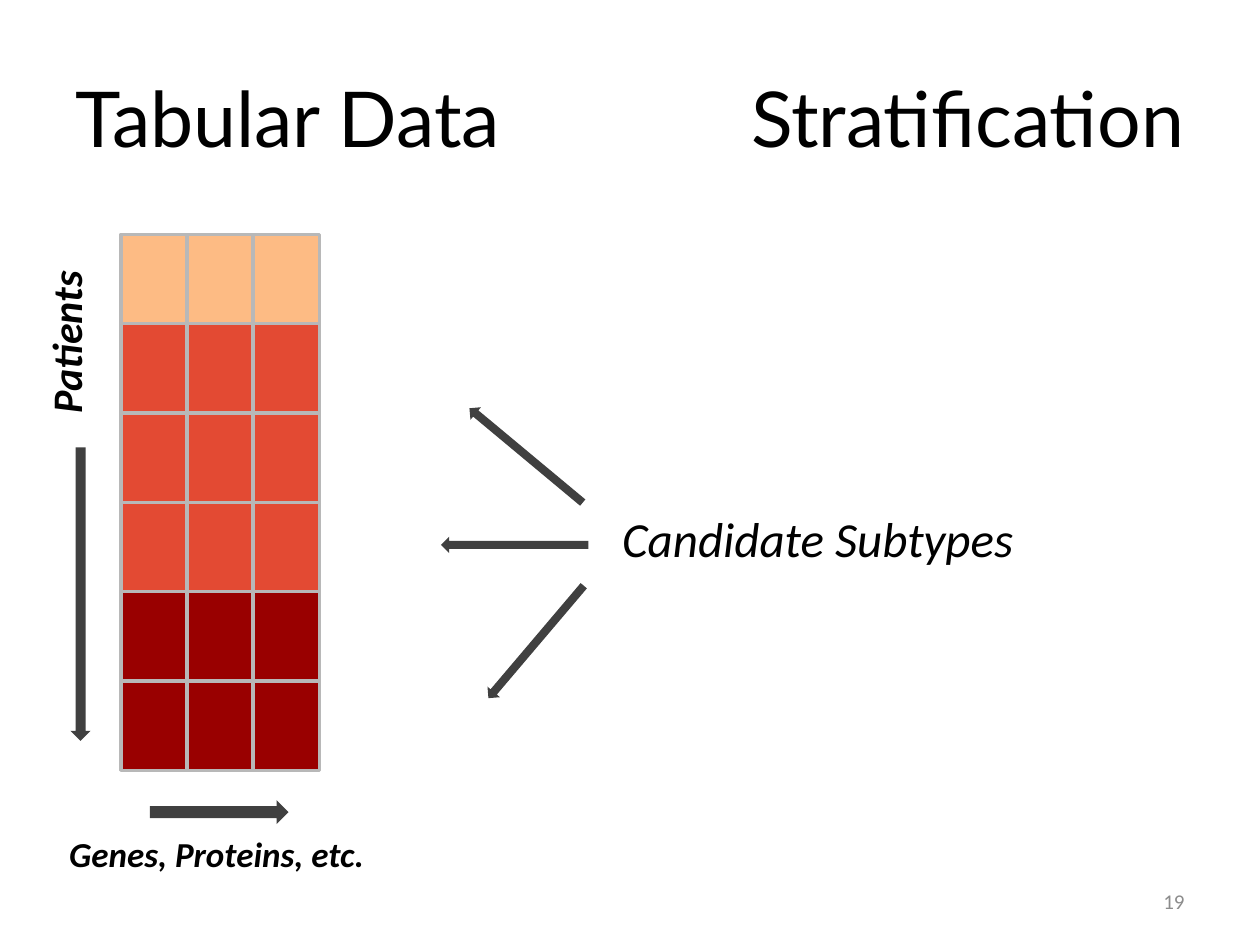
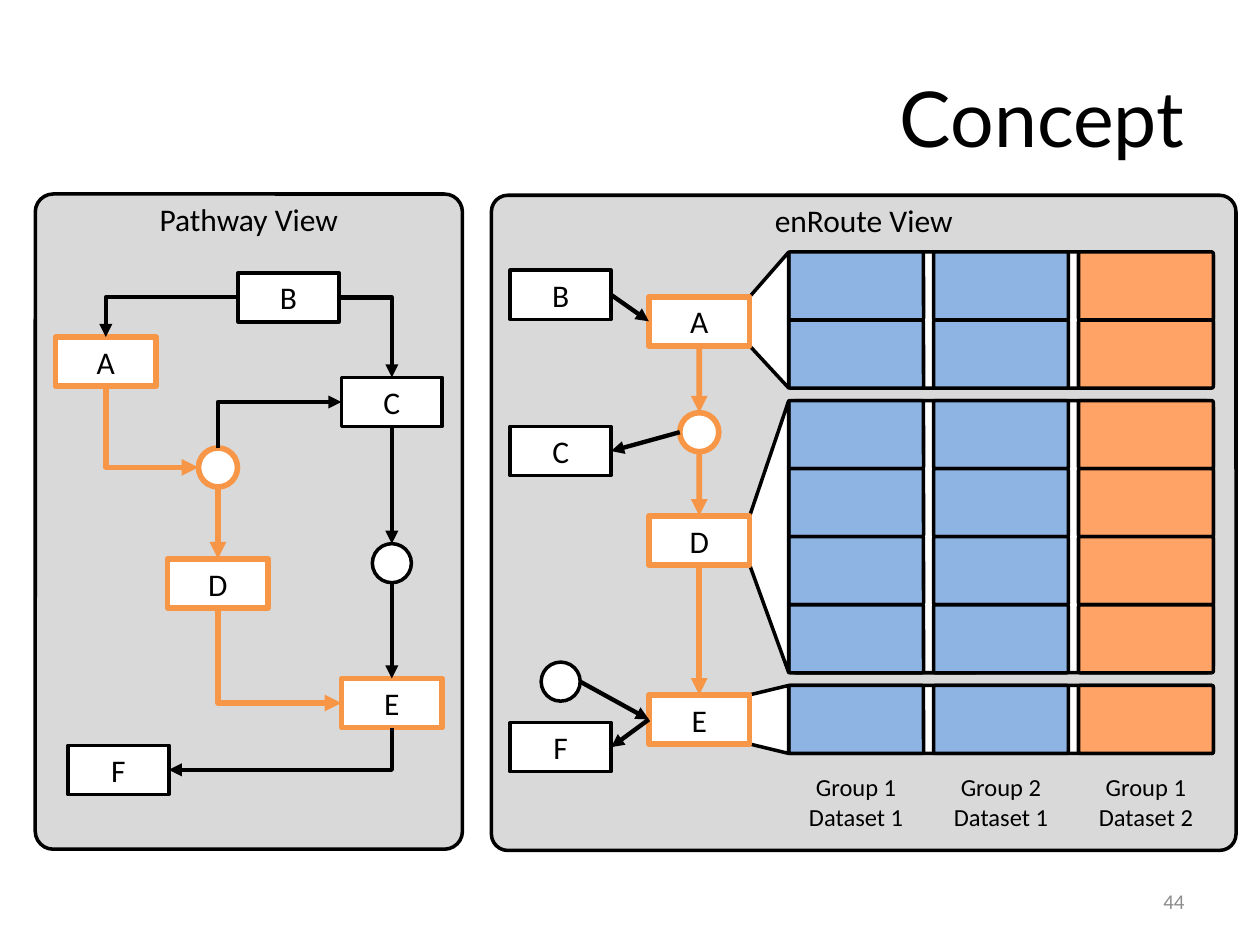
"""Build two slides: patient stratification in tabular data and the enRoute concept."""
from lxml.etree import SubElement
from pptx import Presentation
from pptx.dml.color import RGBColor
from pptx.enum.shapes import MSO_CONNECTOR, MSO_SHAPE
from pptx.enum.text import MSO_ANCHOR, PP_ALIGN
from pptx.oxml.ns import qn
from pptx.util import Inches, Pt

BLACK = RGBColor(0x00, 0x00, 0x00)
WHITE = RGBColor(0xFF, 0xFF, 0xFF)
PANEL_GREY = RGBColor(0xD9, 0xD9, 0xD9)
GRID_GREY = RGBColor(0xB8, 0xB8, 0xB8)
ARROW_GREY = RGBColor(0x40, 0x40, 0x40)
NUMBER_GREY = RGBColor(0x8C, 0x8C, 0x8C)
PEACH = RGBColor(0xFD, 0xBB, 0x84)
RED = RGBColor(0xE3, 0x4A, 0x33)
DARK_RED = RGBColor(0x99, 0x00, 0x00)
BLUE = RGBColor(0x8E, 0xB4, 0xE3)
ORANGE = RGBColor(0xF7, 0x96, 0x46)
LIGHT_ORANGE = RGBColor(0xFF, 0xA3, 0x66)

TITLE_FONT, BODY_FONT = "Lato", "Calibri"
TITLE_BOX = (0.5, 0.3, 9, 1.25)
NUMBER_BOX = (7.17, 6.95, 2.33, 0.4)

PATIENT_ROWS = [PEACH, RED, RED, RED, DARK_RED, DARK_RED]
PATIENT_COLUMNS = 3
PATIENT_ORIGIN = (0.96, 1.86)
PATIENT_CELL = (0.525, 0.709)
ARROWS = [
    (MSO_SHAPE.DOWN_ARROW, (0.56, 3.55, 0.16, 2.33), 0),
    (MSO_SHAPE.RIGHT_ARROW, (1.19, 6.35, 1.1, 0.19), 0),
    (MSO_SHAPE.LEFT_ARROW, (3.5, 4.26, 1.17, 0.13), 0),
    (MSO_SHAPE.LEFT_ARROW, (3.59, 3.55, 1.17, 0.13), 39.8),
    (MSO_SHAPE.LEFT_ARROW, (3.67, 5.03, 1.17, 0.13), 310.3),
]

VIEWS = [
    ("Pathway View", (0.28, 1.54, 3.39, 5.2), 0.042),
    ("enRoute View", (3.9, 1.55, 5.91, 5.2), 0.025),
]
NODE_SIZE = (0.8, 0.39)
RING_SIZE = (0.31, 0.31)
SIDES = {"top": (0, -1), "left": (-1, 0), "bottom": (0, 1), "right": (1, 0)}

PATHWAY_NODES = {
    "A": (0.84, 2.87, ORANGE),
    "B": (2.29, 2.36, BLACK),
    "C": (3.11, 3.19, BLACK),
    "D": (1.73, 4.63, ORANGE),
    "E": (3.11, 5.58, ORANGE),
    "F": (0.94, 6.11, BLACK),
    "ring on route": (1.73, 3.71, ORANGE),
    "ring off route": (3.11, 4.47, BLACK),
}
PATHWAY_LINKS = [
    ("B", "left", "A", "top", BLACK),
    ("B", "right", "C", "top", BLACK),
    ("C", "bottom", "ring off route", "top", BLACK),
    ("ring off route", "bottom", "E", "top", BLACK),
    ("E", "bottom", "F", "right", BLACK),
    ("ring on route", "top", "C", "left", BLACK),
    ("A", "bottom", "ring on route", "left", ORANGE),
    ("ring on route", "bottom", "D", "top", ORANGE),
    ("D", "bottom", "E", "left", ORANGE),
]
ENROUTE_NODES = {
    "A": (5.55, 2.55, ORANGE),
    "B": (4.45, 2.34, BLACK),
    "C": (4.45, 3.58, BLACK),
    "D": (5.55, 4.29, ORANGE),
    "E": (5.55, 5.71, ORANGE),
    "F": (4.45, 5.93, BLACK),
    "ring on route": (5.55, 3.43, ORANGE),
    "ring off route": (4.45, 5.41, BLACK),
}
ENROUTE_LINKS = [
    ("B", "right", "A", "left", BLACK),
    ("ring on route", "left", "C", "right", BLACK),
    ("ring off route", "right", "E", "left", BLACK),
    ("E", "left", "F", "right", BLACK),
    ("A", "bottom", "ring on route", "top", ORANGE),
    ("ring on route", "bottom", "D", "top", ORANGE),
    ("D", "bottom", "E", "top", ORANGE),
]

DATA_ROWS = {"A": 2, "D": 4, "E": 1}
DATA_COLUMNS = [
    ("Group 1\nDataset 1", BLUE),
    ("Group 2\nDataset 1", BLUE),
    ("Group 1\nDataset 2", LIGHT_ORANGE),
]
DATA_ORIGIN = (6.26, 2.0)
DATA_CELL = (1.07, 0.54)
COLUMN_PITCH, BLOCK_GAP = 1.15, 0.1
LABEL_TOP, LABEL_SIZE = 6.08, (0.96, 0.57)


def to_emu(lengths):
    return [Inches(length) for length in lengths]


def format_text(frame, text, size, color=BLACK, font=BODY_FONT, align=PP_ALIGN.LEFT,
                anchor=MSO_ANCHOR.TOP, wrap=True, bold=False, italic=False):
    frame.text = text
    frame.word_wrap = wrap
    frame.vertical_anchor = anchor
    for paragraph in frame.paragraphs:
        paragraph.alignment = align
        paragraph.font.size = Pt(size)
        paragraph.font.name = font
        paragraph.font.color.rgb = color
        paragraph.font.bold = bold
        paragraph.font.italic = italic


def add_text(slide, box, text, size, **style):
    shape = slide.shapes.add_textbox(*to_emu(box))
    format_text(shape.text_frame, text, size, **style)
    return shape


def paint(shape, fill, line=None, width=2):
    shape.shadow.inherit = False
    shape.fill.solid()
    shape.fill.fore_color.rgb = fill
    if line is None:
        shape.line.fill.background()
    else:
        shape.line.color.rgb = line
        shape.line.width = Pt(width)


def add_shape(slide, kind, box, fill, line=None, width=2, corner=None):
    shape = slide.shapes.add_shape(kind, *to_emu(box))
    paint(shape, fill, line, width)
    if corner is not None:
        shape.adjustments[0] = corner
    return shape


def add_slide(presentation, title, number):
    slide = presentation.slides.add_slide(presentation.slide_layouts[5])
    heading = slide.shapes.title
    heading.left, heading.top, heading.width, heading.height = to_emu(TITLE_BOX)
    format_text(heading.text_frame, title, 44, font=TITLE_FONT,
                align=PP_ALIGN.RIGHT, anchor=MSO_ANCHOR.MIDDLE)
    add_text(slide, NUMBER_BOX, number, 12, color=NUMBER_GREY,
             align=PP_ALIGN.RIGHT, anchor=MSO_ANCHOR.MIDDLE)
    return slide


def add_nodes(slide, nodes):
    shapes = {}
    for name, (center_x, center_y, color) in nodes.items():
        is_ring = name.startswith("ring")
        width, height = RING_SIZE if is_ring else NODE_SIZE
        kind = MSO_SHAPE.OVAL if is_ring else MSO_SHAPE.RECTANGLE
        box = (center_x - width / 2, center_y - height / 2, width, height)
        shape = add_shape(slide, kind, box, WHITE, color, 3.2 if color == ORANGE else 2)
        if not is_ring:
            format_text(shape.text_frame, name, 18, align=PP_ALIGN.CENTER,
                        anchor=MSO_ANCHOR.MIDDLE)
        shapes[name] = shape
    return shapes


def side_point(shape, side):
    step_x, step_y = SIDES[side]
    return (shape.left + shape.width * (1 + step_x) // 2,
            shape.top + shape.height * (1 + step_y) // 2)


def add_links(slide, shapes, links):
    for start, start_side, end, end_side, color in links:
        ends = [(start, start_side), (end, end_side)]
        arrow_tag = "a:tailEnd"
        is_elbow = SIDES[start_side][0] ** 2 != SIDES[end_side][0] ** 2
        if is_elbow and start_side in ("top", "bottom"):
            ends.reverse()
            arrow_tag = "a:headEnd"
        points = [side_point(shapes[name], side) for name, side in ends]
        kind = MSO_CONNECTOR.ELBOW if is_elbow else MSO_CONNECTOR.STRAIGHT
        connector = slide.shapes.add_connector(kind, *points[0], *points[1])
        connector.line.color.rgb = color
        connector.line.width = Pt(3.2 if color == ORANGE else 2.5)
        properties = connector.element.spPr
        if is_elbow:
            properties.find(qn("a:prstGeom")).set("prst", "bentConnector2")
        SubElement(properties.find(qn("a:ln")), qn(arrow_tag), type="triangle")
        SubElement(properties, qn("a:effectLst"))
        joints = next(connector.element.iter(qn("p:cNvCxnSpPr")))
        for tag, (name, side) in zip(("a:stCxn", "a:endCxn"), ends):
            site = list(SIDES).index(side) * (2 if name.startswith("ring") else 1)
            SubElement(joints, qn(tag), id=str(shapes[name].shape_id), idx=str(site))


def add_data_block(slide, node, top, rows):
    left = DATA_ORIGIN[0]
    cell_width, cell_height = DATA_CELL
    bottom = top + rows * cell_height
    total_width = COLUMN_PITCH * (len(DATA_COLUMNS) - 1) + cell_width
    add_shape(slide, MSO_SHAPE.ROUNDED_RECTANGLE, (left, top, total_width, bottom - top),
              WHITE, BLACK, corner=0.025)
    for column, (_, color) in enumerate(DATA_COLUMNS):
        for row in range(rows):
            box = (left + column * COLUMN_PITCH, top + row * cell_height, *DATA_CELL)
            add_shape(slide, MSO_SHAPE.ROUNDED_RECTANGLE, box, color, BLACK, corner=0.025)
    center_x, center_y, _ = ENROUTE_NODES[node]
    node_right = center_x + NODE_SIZE[0] / 2
    half_height = NODE_SIZE[1] / 2
    corners = [(node_right, center_y - half_height), (left, top),
               (left, bottom), (node_right, center_y + half_height)]
    first, *others = [to_emu(corner) for corner in corners]
    builder = slide.shapes.build_freeform(*first, scale=1.0)
    builder.add_line_segments(others, close=True)
    paint(builder.convert_to_shape(), WHITE, BLACK)
    return bottom + BLOCK_GAP


def build_stratification(presentation):
    slide = add_slide(presentation, "Stratification", "19")
    left, top = PATIENT_ORIGIN
    width, height = PATIENT_CELL
    for row, color in enumerate(PATIENT_ROWS):
        for column in range(PATIENT_COLUMNS):
            box = (left + column * width, top + row * height, width, height)
            add_shape(slide, MSO_SHAPE.RECTANGLE, box, color, GRID_GREY)
    for kind, box, rotation in ARROWS:
        add_shape(slide, kind, box, ARROW_GREY).rotation = rotation
    patients = add_text(slide, (0.27, 1.47, 0.61, 1.91), "Patients", 24, bold=True, italic=True)
    patients.element.txBody.find(qn("a:bodyPr")).set("vert", "vert270")
    add_text(slide, TITLE_BOX, "Tabular Data", 44, font=TITLE_FONT, anchor=MSO_ANCHOR.MIDDLE)
    add_text(slide, (4.84, 3.99, 3.36, 0.57), "Candidate Subtypes", 28, italic=True, wrap=False)
    add_text(slide, (0.45, 6.56, 2.59, 0.44), "Genes, Proteins, etc.", 20,
             bold=True, italic=True, wrap=False)


def build_concept(presentation):
    slide = add_slide(presentation, "Concept", "44")
    for name, box, corner in VIEWS:
        add_shape(slide, MSO_SHAPE.ROUNDED_RECTANGLE, box, PANEL_GREY, BLACK, corner=corner)
        left, top, width, _ = box
        add_text(slide, (left, top, width, 0.4), name, 18, align=PP_ALIGN.CENTER)
    top = DATA_ORIGIN[1]
    for node, rows in DATA_ROWS.items():
        top = add_data_block(slide, node, top, rows)
    for column, (label, _) in enumerate(DATA_COLUMNS):
        center = DATA_ORIGIN[0] + column * COLUMN_PITCH + DATA_CELL[0] / 2
        add_text(slide, (center - LABEL_SIZE[0] / 2, LABEL_TOP, *LABEL_SIZE), label, 14,
                 align=PP_ALIGN.CENTER, wrap=False)
    for nodes, links in ((PATHWAY_NODES, PATHWAY_LINKS), (ENROUTE_NODES, ENROUTE_LINKS)):
        add_links(slide, add_nodes(slide, nodes), links)


def main():
    presentation = Presentation()
    presentation.slide_width, presentation.slide_height = Inches(10), Inches(7.5)
    build_stratification(presentation)
    build_concept(presentation)
    presentation.save("out.pptx")


if __name__ == "__main__":
    main()
